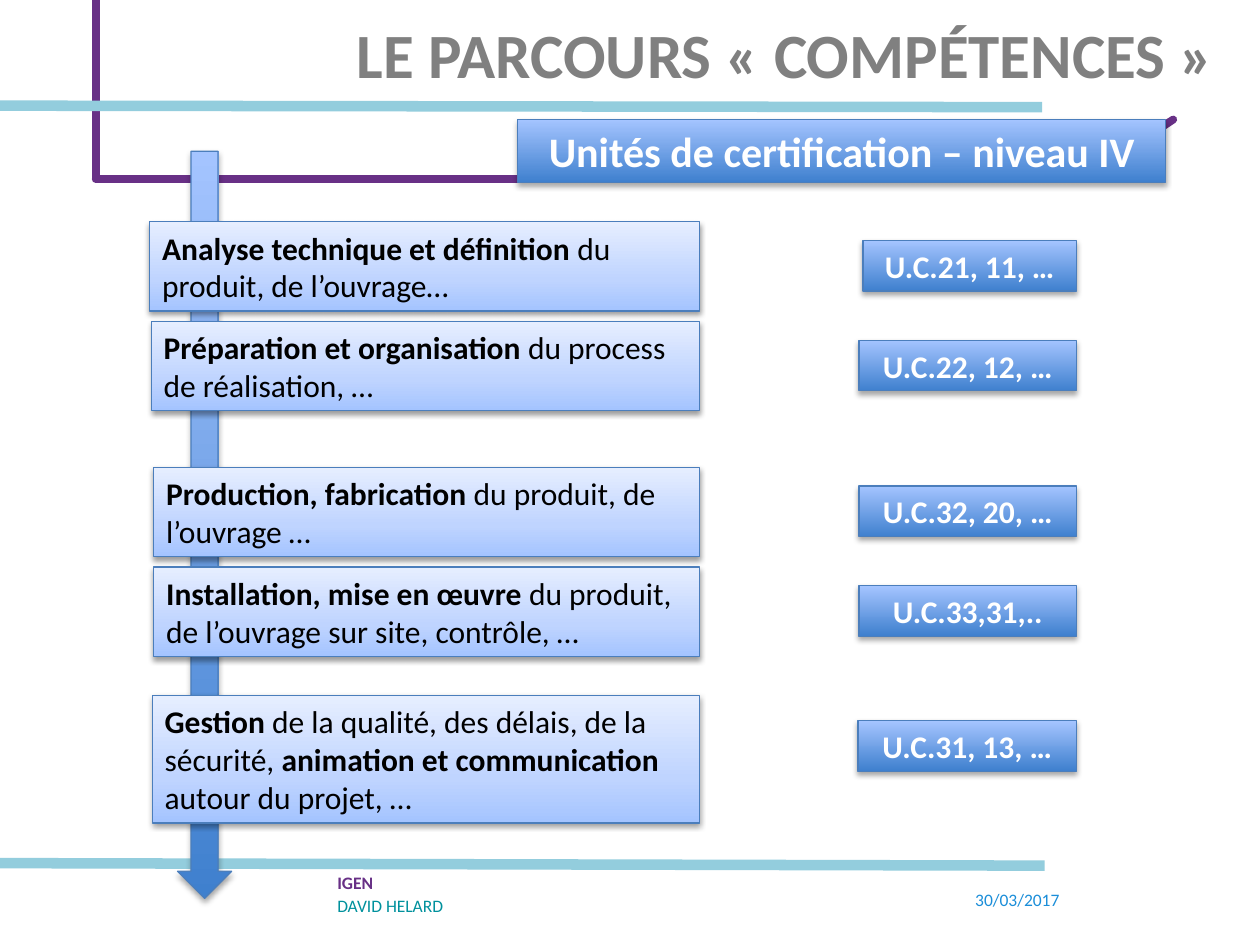
import copy

import pptx
import pptx.dml.color
import pptx.enum.shapes
import pptx.enum.text
import pptx.oxml
import pptx.oxml.ns
import pptx.util
from pptx.util import Cm

COLORS = {
    "purple": "683086",
    "cyan": "93CDDD",
    "title": "808080",
    "date": "1B8ED9",
    "teal": "00919D",
    "outline": "4B7EBC",
    "deep": "3F80CE",
    "light": "A4C4FF",
    "pale": "BFD4FF",
    "palest": "E6EEFF",
    "black": "000000",
    "white": "FFFFFF",
}
FONT = "Calibri"
STRONG_STOPS = [(0, "deep"), (1, "light")]
SOFT_STOPS = [(0, "light"), (0.35, "pale"), (1, "palest")]
STEP_RIGHT, UNIT_RIGHT, UNIT_HEIGHT = 14.11, 21.7, 1.02

# step left, top, height; unit left, top; step runs (text, bold); unit label
STEPS = [
    (3.02, 4.47, 1.8, 17.4, 4.85,
     [("Analyse technique et définition ", True),
      ("du produit, de l’ouvrage…", False)], "U.C.21, 11, …"),
    (3.05, 6.48, 1.8, 17.32, 6.86,
     [("Préparation et organisation ", True),
      ("du process de réalisation, …", False)], "U.C.22, 12, …"),
    (3.1, 9.42, 1.8, 17.32, 9.8,
     [("Production, fabrication ", True),
      ("du produit, de l’ouvrage …", False)], "U.C.32, 20, …"),
    (3.1, 11.43, 1.8, 17.32, 11.81,
     [("Installation, mise en œuvre ", True),
      ("du produit, de l’ouvrage sur site, contrôle, …", False)], "U.C.33,31,.."),
    (3.07, 14.02, 2.57, 17.3, 14.53,
     [("Gestion", True),
      (" de la qualité, des délais, de la sécurité, ", False),
      ("animation et communication ", True),
      ("autour du projet, …", False)], "U.C.31, 13, …"),
]


def rgb(name):
    return pptx.dml.color.RGBColor.from_string(COLORS[name])


def add_run(paragraph, text, size, color, bold=False):
    run = paragraph.add_run()
    run.text = text
    run.font.name = FONT
    run.font.size = pptx.util.Pt(size)
    run.font.bold = bold
    run.font.color.rgb = rgb(color)


def add_line(slide, start, end, color, width, cap="flat"):
    line = slide.shapes.add_connector(
        pptx.enum.shapes.MSO_CONNECTOR.STRAIGHT,
        Cm(start[0]), Cm(start[1]), Cm(end[0]), Cm(end[1]))
    line.line.color.rgb = rgb(color)
    line.line.width = pptx.util.Pt(width)
    line.line._get_or_add_ln().set("cap", cap)
    properties = line._element.spPr
    properties.append(properties.makeelement(pptx.oxml.ns.qn("a:effectLst"), {}))


def add_text(slide, left, top, width, height, anchor):
    """Add an empty text box and return its first paragraph."""
    text_frame = slide.shapes.add_textbox(
        Cm(left), Cm(top), Cm(width), Cm(height)).text_frame
    text_frame.word_wrap = True
    text_frame.vertical_anchor = anchor
    return text_frame.paragraphs[0]


def set_gradient(shape, stops):
    """Fill the shape with colour stops that run from bottom to top."""
    shape.fill.gradient()
    shape.fill.gradient_angle = 90
    stop_list = shape._element.spPr.find(".//" + pptx.oxml.ns.qn("a:gsLst"))
    while len(stop_list) < len(stops):
        stop_list.append(copy.deepcopy(stop_list[-1]))
    for stop, (position, color) in zip(shape.fill.gradient_stops, stops):
        stop.position = position
        stop.color.rgb = rgb(color)


def set_shadow(shape, distance, opacity):
    shape.shadow.inherit = False
    effects = shape._element.spPr.find(pptx.oxml.ns.qn("a:effectLst"))
    effects.append(pptx.oxml.parse_xml(
        f'<a:outerShdw {pptx.oxml.ns.nsdecls("a")} blurRad="40000" dist="{distance}" '
        f'dir="5400000" rotWithShape="0"><a:srgbClr val="{COLORS["black"]}">'
        f'<a:alpha val="{opacity * 1000}"/></a:srgbClr></a:outerShdw>'))


def add_shape(slide, kind, left, top, width, height, soft=False):
    shape = slide.shapes.add_shape(kind, Cm(left), Cm(top), Cm(width), Cm(height))
    set_gradient(shape, SOFT_STOPS if soft else STRONG_STOPS)
    shape.line.color.rgb = rgb("outline")
    shape.line.width = pptx.util.Pt(0.75)
    set_shadow(shape, *((20000, 38) if soft else (23000, 35)))
    return shape


def add_box(slide, left, top, width, height, runs, size=18, soft=False):
    shape = add_shape(slide, pptx.enum.shapes.MSO_SHAPE.RECTANGLE,
                      left, top, width, height, soft)
    text_frame = shape.text_frame
    text_frame.word_wrap = True
    text_frame.auto_size = pptx.enum.text.MSO_AUTO_SIZE.SHAPE_TO_FIT_TEXT
    paragraph = text_frame.paragraphs[0]
    alignment = pptx.enum.text.PP_ALIGN
    paragraph.alignment = alignment.LEFT if soft else alignment.CENTER
    for text, bold in runs:
        add_run(paragraph, text, size, "black" if soft else "white", bold)


def add_frame(slide):
    add_line(slide, (1.93, 3.61), (21.87, 3.61), "purple", 4.5, "rnd")
    add_line(slide, (21.87, 3.58), (23.65, 2.41), "purple", 4.5, "rnd")
    add_line(slide, (1.93, 3.58), (1.93, 0), "purple", 4.5, "rnd")
    add_line(slide, (-0.15, 17.4), (21.06, 17.45), "cyan", 6)
    add_line(slide, (0, 2.13), (21.01, 2.16), "cyan", 6)


def add_title_and_footer(slide):
    anchor = pptx.enum.text.MSO_ANCHOR
    title = add_text(slide, 0.51, 0, 24.21, 2.16, anchor.MIDDLE)
    title.alignment = pptx.enum.text.PP_ALIGN.RIGHT
    add_run(title, "LE PARCOURS «\u00a0COMPÉTENCES\u00a0»", 36, "title", True)

    date = add_text(slide, 19.41, 17.75, 3.23, 1.02, anchor.TOP)
    add_run(date, "30/03/2017", 10, "date")

    author = add_text(slide, 6.55, 17.07, 8.66, 1.88, anchor.MIDDLE)
    add_run(author, "IGEN", 10, "purple", True)
    author.add_line_break()
    add_run(author, "DAVID HELARD", 10, "teal")
    for paragraph in (date, author):
        paragraph.line_spacing = pptx.util.Pt(13.2)


def main():
    presentation = pptx.Presentation()
    presentation.slide_width, presentation.slide_height = Cm(25.4), Cm(19.05)
    slide = presentation.slides.add_slide(presentation.slide_layouts[6])

    add_frame(slide)
    add_title_and_footer(slide)
    add_shape(slide, pptx.enum.shapes.MSO_SHAPE.DOWN_ARROW, 3.58, 3.05, 1.09, 15.06)
    for left, top, height, unit_left, unit_top, runs, unit in STEPS:
        add_box(slide, left, top, STEP_RIGHT - left, height, runs, soft=True)
        add_box(slide, unit_left, unit_top, UNIT_RIGHT - unit_left, UNIT_HEIGHT,
                [(unit, True)])
    add_box(slide, 10.44, 2.41, 13.06, 1.27,
            [("Unités de certification – niveau IV", True)], size=24)

    presentation.save("out.pptx")


if __name__ == "__main__":
    main()
